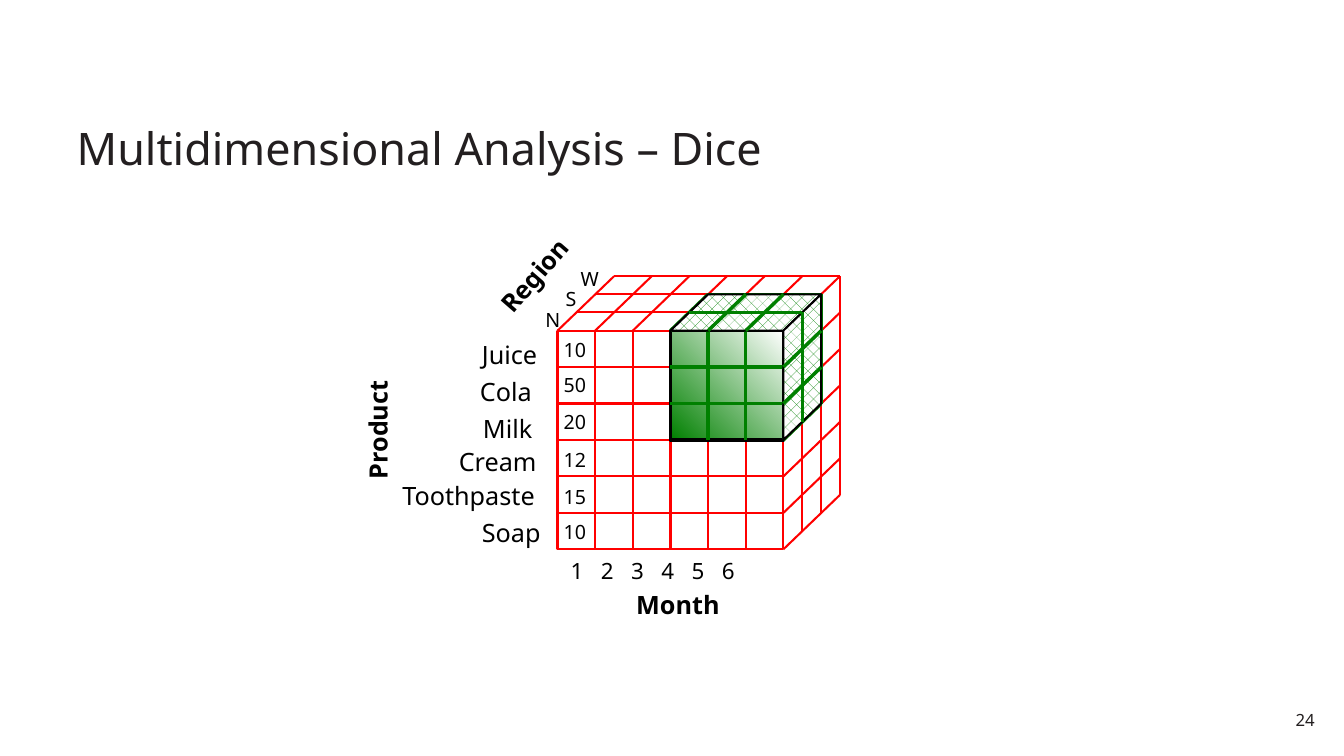
from pptx import Presentation
from pptx.dml.color import RGBColor
from pptx.enum.dml import MSO_PATTERN_TYPE as Pattern
from pptx.enum.shapes import MSO_CONNECTOR as Connector, MSO_SHAPE as Preset
from pptx.enum.text import MSO_ANCHOR as Anchor, MSO_AUTO_SIZE as AutoSize, PP_ALIGN as Align
from pptx.oxml.ns import qn
from pptx.util import Inches, Pt
from lxml.etree import SubElement

COLORS = {"ink": "231F20", "black": "000000", "white": "FFFFFF", "grid": "FF0000", "dice": "008000"}
FONT = "Noto Sans"
LEFT, TOP, WIDTH, HEIGHT = 5.53, 3.28, 2.24, 2.17
MONTHS, PRODUCTS, REGIONS = 6, 6, 3
DEPTH_X, DEPTH_Y = 0.187, 0.18
DICE_MONTH, DICE_PRODUCTS, DICE_REGIONS = 3, 3, 2
THIN, THICK = 1.48, 2.48
PRODUCT_ROWS = [
    ("Juice", 4.78, 3.37, 0.76, "10", 3.35),
    ("Cola", 4.76, 3.73, 0.67, "50", 3.70),
    ("Milk", 4.79, 4.10, 0.59, "20", 4.07),
    ("Cream", 4.55, 4.43, 0.98, "12", 4.44),
    ("Toothpaste", 3.99, 4.77, 1.38, "15", 4.81),
    ("Soap", 4.78, 5.13, 0.76, "10", 5.16),
]


def rgb(name):
    """Return a palette colour."""
    return RGBColor.from_string(COLORS[name])


def corner(month, product, region):
    """Project a cube grid position onto the slide."""
    return (Inches(LEFT + month * WIDTH / MONTHS + region * DEPTH_X),
            Inches(TOP + product * HEIGHT / PRODUCTS - region * DEPTH_Y))


def add_edge(slide, start, end, color, weight, start_join=None, end_join=None):
    """Draw a line between two cube positions, joined to shapes where given."""
    edge = slide.shapes.add_connector(Connector.STRAIGHT, *corner(*start), *corner(*end))
    edge.line.color.rgb = rgb(color)
    edge.line.width = Pt(weight)
    SubElement(edge._element.spPr, qn("a:effectLst"))
    if start_join:
        edge.begin_connect(*start_join)
    if end_join:
        edge.end_connect(*end_join)


def add_front(slide, top_left, bottom_right, color, weight):
    """Draw a front face as an unfilled rectangle."""
    (left, top), (right, bottom) = corner(*top_left), corner(*bottom_right)
    front = slide.shapes.add_shape(Preset.RECTANGLE, left, top, right - left, bottom - top)
    front.shadow.inherit = False
    front.fill.background()
    front.line.color.rgb = rgb(color)
    front.line.width = Pt(weight)
    return front


def add_side(slide, corners):
    """Draw a patterned side face of the dice."""
    start, *others = [corner(*position) for position in corners]
    outline = slide.shapes.build_freeform(*start)
    outline.add_line_segments(others, close=True)
    side = outline.convert_to_shape()
    side.shadow.inherit = False
    side.fill.patterned()
    side.fill.pattern = Pattern.PERCENT_25
    side.fill.fore_color.rgb = rgb("dice")
    side.fill.back_color.rgb = rgb("white")
    side.line.color.rgb = rgb("black")
    side.line.width = Pt(THIN)


def write(paragraph, text, size, color="black", bold=False):
    """Add a formatted run to a paragraph."""
    run = paragraph.add_run()
    run.text = text
    run.font.name = FONT
    run.font.size = Pt(size)
    run.font.bold = bold
    run.font.color.rgb = rgb(color)


def set_margins(frame, side, end):
    """Set the horizontal and vertical text margins."""
    frame.margin_left = frame.margin_right = Inches(side)
    frame.margin_top = frame.margin_bottom = Inches(end)


def add_label(slide, text, left, top, width, height, size, bold=False, rotation=0):
    """Add a text label without margins and return its paragraph."""
    label = slide.shapes.add_textbox(Inches(left), Inches(top), Inches(width), Inches(height))
    label.rotation = rotation
    label.text_frame.word_wrap = True
    set_margins(label.text_frame, 0, 0)
    paragraph = label.text_frame.paragraphs[0]
    write(paragraph, text, size, bold=bold)
    return paragraph


def add_title(slide, text):
    """Place and fill the title placeholder."""
    title = slide.shapes.title
    title.left, title.top, title.width, title.height = map(Inches, (0.68, 0.76, 11.97, 1.02))
    frame = title.text_frame
    frame.auto_size = AutoSize.NONE
    frame.vertical_anchor = Anchor.BOTTOM
    set_margins(frame, 0.08, 0.04)
    paragraph = frame.paragraphs[0]
    paragraph.alignment = Align.LEFT
    paragraph.line_spacing = 0.9
    write(paragraph, text, 32, "ink")


def add_page_number(slide, number):
    """Add the page number at the lower right."""
    box = slide.shapes.add_textbox(Inches(12.65), Inches(6.98), Inches(0.47), Inches(0.31))
    box.text_frame.word_wrap = True
    set_margins(box.text_frame, 0.08, 0.06)
    paragraph = box.text_frame.paragraphs[0]
    paragraph.alignment = Align.RIGHT
    write(paragraph, number, 12, "ink")


def add_cube(slide):
    """Draw the full data cube grid."""
    front = add_front(slide, (0, 0, 0), (MONTHS, PRODUCTS, 0), "grid", THIN)

    def site(index, position, count):
        return (front, index) if position * 2 == count else None

    for row in range(1, PRODUCTS):
        add_edge(slide, (0, row, 0), (MONTHS, row, 0), "grid", THIN,
                 site(1, row, PRODUCTS), site(3, row, PRODUCTS))
    for month in range(1, MONTHS):
        add_edge(slide, (month, 0, 0), (month, PRODUCTS, 0), "grid", THIN,
                 site(0, month, MONTHS), site(2, month, MONTHS))
    for region in range(1, REGIONS + 1):
        add_edge(slide, (0, 0, region), (MONTHS, 0, region), "grid", THIN)
        add_edge(slide, (MONTHS, 0, region), (MONTHS, PRODUCTS, region), "grid", THIN)
    for month in range(MONTHS + 1):
        add_edge(slide, (month, 0, 0), (month, 0, REGIONS), "grid", THIN, site(0, month, MONTHS))
    for row in range(1, PRODUCTS + 1):
        add_edge(slide, (MONTHS, row, 0), (MONTHS, row, REGIONS), "grid", THIN,
                 site(3, row, PRODUCTS))


def add_dice(slide):
    """Draw the highlighted sub-cube."""
    first, last, bottom, back = DICE_MONTH, MONTHS, DICE_PRODUCTS, DICE_REGIONS
    front = add_front(slide, (first, 0, 0), (last, bottom, 0), "black", THICK)
    front.fill.gradient()
    front.fill.gradient_angle = 45
    for stop, color in zip(front.fill.gradient_stops, ("dice", "white")):
        stop.color.rgb = rgb(color)
    near_top, far_left, far_right = (last, 0, 0), (first, 0, back), (last, 0, back)
    near_low, far_low = (last, bottom, 0), (last, bottom, back)
    rim = [((first, 0, 0), far_left), (far_left, far_right), (far_right, far_low),
           (near_low, far_low), (near_top, far_right)]
    rows = [((first, row, 0), (last, row, 0)) for row in range(1, bottom)]
    columns = [((month, 0, 0), (month, bottom, 0)) for month in range(first + 1, last)]
    for start, end in rim + rows + columns:
        add_edge(slide, start, end, "dice", THICK)
    add_side(slide, [(first, 0, 0), far_left, far_right, near_top])
    add_side(slide, [near_top, far_right, far_low, near_low])
    for month in range(first + 1, last):
        add_edge(slide, (month, 0, 0), (month, 0, back), "dice", THICK)
    for region in range(1, back):
        add_edge(slide, (first, 0, region), (last, 0, region), "dice", THICK)
        add_edge(slide, (last, 0, region), (last, bottom, region), "dice", THICK)
    for row in range(1, bottom):
        add_edge(slide, (last, row, 0), (last, row, back), "dice", THICK)


def add_axis_labels(slide):
    """Label products, months and regions."""
    for product, left, top, width, value, value_top in PRODUCT_ROWS:
        add_label(slide, value, 5.59, value_top, 0.25, 0.24, 14)
        add_label(slide, product, left, top, width, 0.23, 18)
    months = add_label(slide, "\t".join(str(month + 1) for month in range(MONTHS)),
                       5.66, 5.53, 2.06, 0.48, 16)
    tabs = SubElement(months._p.get_or_add_pPr(), qn("a:tabLst"))
    for month in range(1, MONTHS):
        SubElement(tabs, qn("a:tab"), pos=str(Inches(0.3 * month)), algn="l")
    for region, left, top in (("N", 5.41, 3.05), ("S", 5.61, 2.85), ("W", 5.76, 2.65)):
        add_label(slide, region, left, top, 0.23, 0.23, 14)
    add_label(slide, "Month", 6.31, 5.85, 1.08, 0.42, 18, True)
    add_label(slide, "Region", 4.83, 2.53, 1.01, 0.28, 18, True, 311)
    add_label(slide, "Product", 3.08, 3.89, 1.38, 0.35, 18, True, 270)


def main():
    """Build and save the slide."""
    deck = Presentation()
    deck.slide_width, deck.slide_height = Inches(13.33), Inches(7.5)
    slide = deck.slides.add_slide(deck.slide_layouts[5])
    add_title(slide, "Multidimensional Analysis – Dice")
    add_page_number(slide, "24")
    add_cube(slide)
    add_axis_labels(slide)
    add_dice(slide)
    deck.save("out.pptx")


if __name__ == "__main__":
    main()
